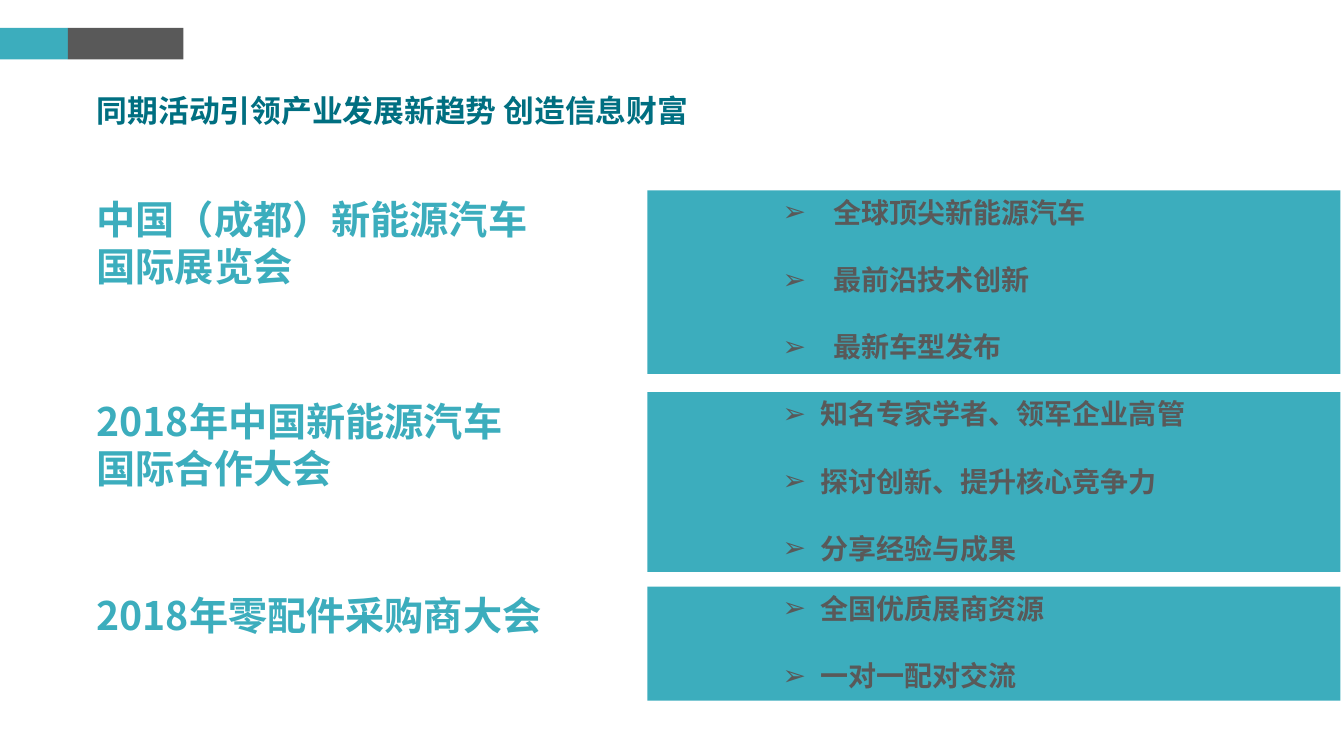
from lxml import etree
from pptx import Presentation
from pptx.dml.color import RGBColor
from pptx.enum.shapes import MSO_SHAPE
from pptx.enum.text import MSO_ANCHOR, PP_ALIGN
from pptx.oxml.ns import qn
from pptx.util import Pt

RECTANGLE = MSO_SHAPE.RECTANGLE
TOP = MSO_ANCHOR.TOP
LEFT = PP_ALIGN.LEFT

COLORS = {"teal": "3CADBD", "deep_teal": "006F81", "dark_gray": "595959"}
CHINESE_FONT = "Noto Sans CJK SC"
TEXT_LEFT = 62
PANEL_LEFT, PANEL_WIDTH = 462.5, 495
BULLETS_LEFT, BULLETS_WIDTH = 552, 368

# heading, heading width, points, bullet indent, panel top, panel height
EVENTS = [
    ("中国（成都）新能源汽车国际展览会", 342.7,
     ["全球顶尖新能源汽车", "最前沿技术创新", "最新车型发布"], 36, 136, 131),
    ("2018年中国新能源汽车国际合作大会", 317,
     ["知名专家学者、领军企业高管", "探讨创新、提升核心竞争力", "分享经验与成果"], 27, 280, 128.5),
    ("2018年零配件采购商大会", 353.5,
     ["全国优质展商资源", "一对一配对交流"], 27, 419, 81.5),
]


def add_block(left, top, width, height, color):
    block = slide.shapes.add_shape(RECTANGLE, Pt(left), Pt(top), Pt(width), Pt(height))
    block.shadow.inherit = False
    block.fill.solid()
    block.fill.fore_color.rgb = RGBColor.from_string(COLORS[color])
    block.line.fill.background()


def style_paragraph(paragraph, size, color):
    """Format every run, naming the font for Latin and East Asian text alike."""
    paragraph.alignment = LEFT
    for run in paragraph.runs:
        run.font.size = Pt(size)
        run.font.bold = True
        run.font.name = CHINESE_FONT
        run.font.color.rgb = RGBColor.from_string(COLORS[color])
        east_asian = etree.SubElement(run.font._element, qn("a:ea"))
        east_asian.set("typeface", CHINESE_FONT)


prs = Presentation()
prs.slide_width, prs.slide_height = Pt(960), Pt(540)
slide = prs.slides.add_slide(prs.slide_layouts[5])

add_block(0, 20, 48.5, 22.5, "teal")
add_block(48.5, 20, 82.5, 22.5, "dark_gray")

title = slide.shapes.title
title.left, title.top, title.width, title.height = Pt(TEXT_LEFT), Pt(62), Pt(603), Pt(34)
title.text_frame.text = "同期活动引领产业发展新趋势 创造信息财富"
title.text_frame.vertical_anchor = TOP
style_paragraph(title.text_frame.paragraphs[0], 22, "deep_teal")

for heading, heading_width, points, indent, top, height in EVENTS:
    add_block(PANEL_LEFT, top, PANEL_WIDTH, height, "teal")

    event_name = slide.shapes.add_textbox(
        Pt(TEXT_LEFT), Pt(top), Pt(heading_width), Pt(75)).text_frame
    event_name.word_wrap = True
    event_name.text = heading
    style_paragraph(event_name.paragraphs[0], 28, "teal")

    highlights = slide.shapes.add_textbox(
        Pt(BULLETS_LEFT), Pt(top), Pt(BULLETS_WIDTH), Pt(height)).text_frame
    highlights.word_wrap = True
    highlights.text = "\n".join(points)
    for number, paragraph in enumerate(highlights.paragraphs):
        properties = paragraph._p.get_or_add_pPr()
        properties.set("marL", str(Pt(indent)))
        properties.set("indent", str(-Pt(indent)))
        etree.SubElement(properties, qn("a:buFont")).set("typeface", "Arial")
        etree.SubElement(properties, qn("a:buChar")).set("char", "➢")
        if number:
            paragraph.space_before = Pt(24)
        style_paragraph(paragraph, 20, "dark_gray")

prs.save("out.pptx")
